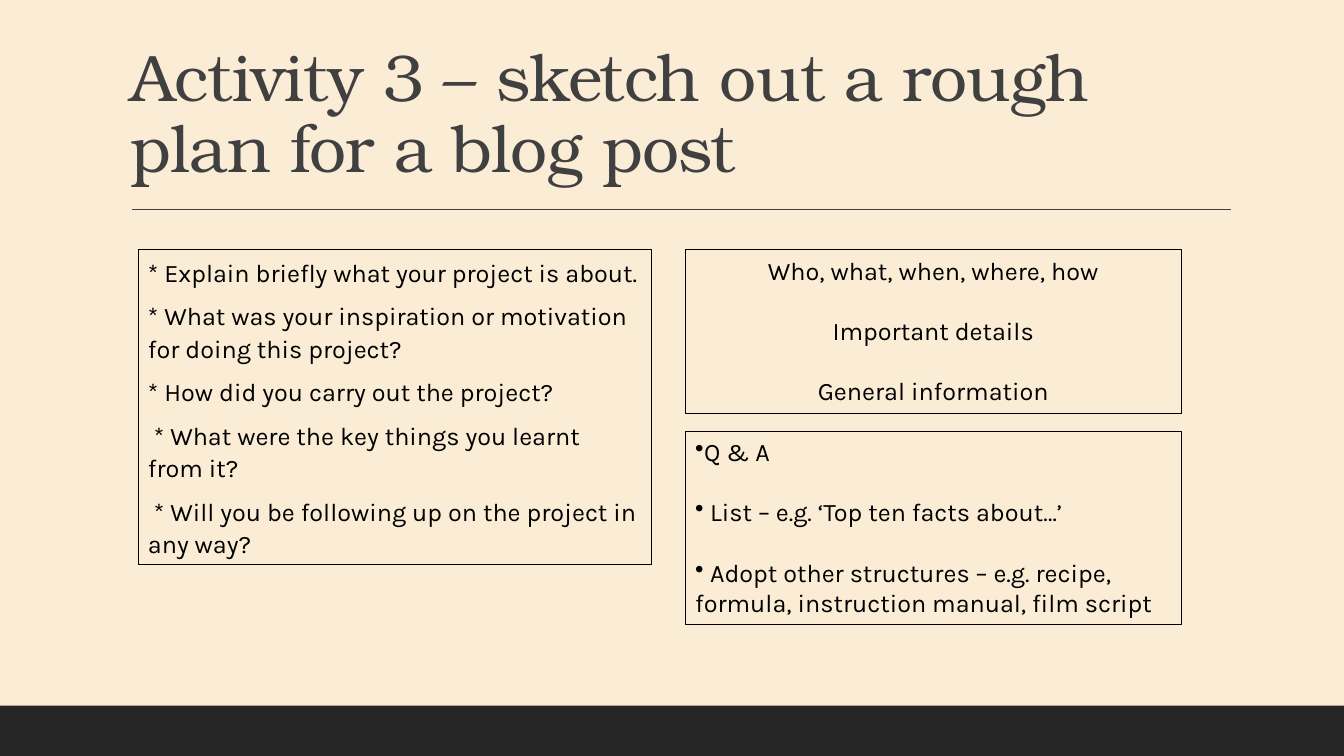
import pptx
import pptx.util
import pptx.dml.color
import pptx.enum.shapes
import pptx.enum.text
from lxml import etree

Cm = pptx.util.Cm
Pt = pptx.util.Pt
ALIGN = pptx.enum.text.PP_ALIGN
ANCHOR = pptx.enum.text.MSO_ANCHOR
RECT = pptx.enum.shapes.MSO_SHAPE.RECTANGLE
NS = "{http://schemas.openxmlformats.org/drawingml/2006/main}"

COLORS = {"cream": "FAECD5", "dark": "262626", "grey": "404040", "ink": "000000"}
HEAD, BODY = "TeX Gyre Bonum", "Karla"
WIDE, HIGH = 33.87, 19.05
TOP, RIGHT, SPAN = 6.3, 17.27, 12.5  # top of the boxes, right column

ASKS = [
    "* Explain briefly what your project is about.",
    "* What was your inspiration or motivation for doing this project?",
    "* How did you carry out the project?",
    " * What were the key things you learnt from it?",
    " * Will you be following up on the project in any way?",
]
FACTS = ["Who, what, when, where, how", "Important details", "General information"]
FORMS = [
    "Q & A",
    " List – e.g. ‘Top ten facts about…’",
    " Adopt other structures – e.g. recipe, formula, instruction manual, film script",
]


def rgb(name):
    return pptx.dml.color.RGBColor.from_string(COLORS[name])


def style(para, font, size, color):
    para.font.name = font
    para.font.size = Pt(size)
    para.font.color.rgb = rgb(color)


def add_bar(slide, top, height):
    bar = slide.shapes.add_shape(RECT, 0, Cm(top), Cm(WIDE), Cm(height))
    bar.shadow.inherit = False
    bar.fill.solid()
    bar.fill.fore_color.rgb = rgb("dark")
    bar.line.fill.background()


def add_rule(slide, left, right, y):
    kind = pptx.enum.shapes.MSO_CONNECTOR.STRAIGHT
    rule = slide.shapes.add_connector(kind, Cm(left), Cm(y), Cm(right), Cm(y))
    rule.line.color.rgb = rgb("grey")
    rule.line.width = Pt(1)
    etree.SubElement(rule._element.spPr, NS + "effectLst")


def add_title(slide, text, left, top, width, height):
    box = slide.shapes.add_textbox(Cm(left), Cm(top), Cm(width), Cm(height))
    frame = box.text_frame
    frame.word_wrap = True
    frame.vertical_anchor = ANCHOR.BOTTOM
    para = frame.paragraphs[0]
    para.line_spacing = 0.9
    style(para, HEAD, 47, "grey")
    run = para.add_run()
    run.text = text
    run._r.get_or_add_rPr().set("spc", "-50")


def add_bullet(para):
    etree.SubElement(para._p.get_or_add_pPr(), NS + "buChar", char="•")


def add_box(slide, lines, left, top, width, height, align=ALIGN.LEFT,
            before=0, after=0, pitch=1.0, bullet=False):
    box = slide.shapes.add_shape(RECT, Cm(left), Cm(top), Cm(width), Cm(height))
    box.shadow.inherit = False
    box.fill.background()
    box.line.color.rgb = rgb("ink")
    box.line.width = Pt(0.75)
    frame = box.text_frame
    frame.word_wrap = True
    frame.vertical_anchor = ANCHOR.TOP
    for i, line in enumerate(lines):
        para = frame.add_paragraph() if i else frame.paragraphs[0]
        para.text = line
        para.alignment = align
        para.line_spacing = pitch
        para.space_before = Pt(before if i else 0)
        para.space_after = Pt(after)
        if bullet:
            add_bullet(para)
        style(para, BODY, 18, "ink")


def main():
    deck = pptx.Presentation()
    deck.slide_width, deck.slide_height = Cm(WIDE), Cm(HIGH)
    slide = deck.slides.add_slide(deck.slide_layouts[6])
    slide.background.fill.solid()
    slide.background.fill.fore_color.rgb = rgb("cream")

    # Frame and heading
    add_bar(slide, 17.78, 1.27)
    add_rule(slide, 3.33, 31.01, 5.28)
    add_title(slide, "Activity 3 – sketch out a rough plan for a blog post",
              3.05, 0.79, 27.94, 4.04)

    # Questions on the left, content and formats on the right
    add_box(slide, ASKS, 3.48, TOP, 12.93, 7.92, after=8, pitch=1.07)
    add_box(slide, FACTS, RIGHT, TOP, SPAN, 4.11, align=ALIGN.CENTER, before=21.5)
    add_box(slide, FORMS, RIGHT, 10.87, SPAN, 4.88, before=21.5, bullet=True)

    deck.save("out.pptx")


if __name__ == "__main__":
    main()
